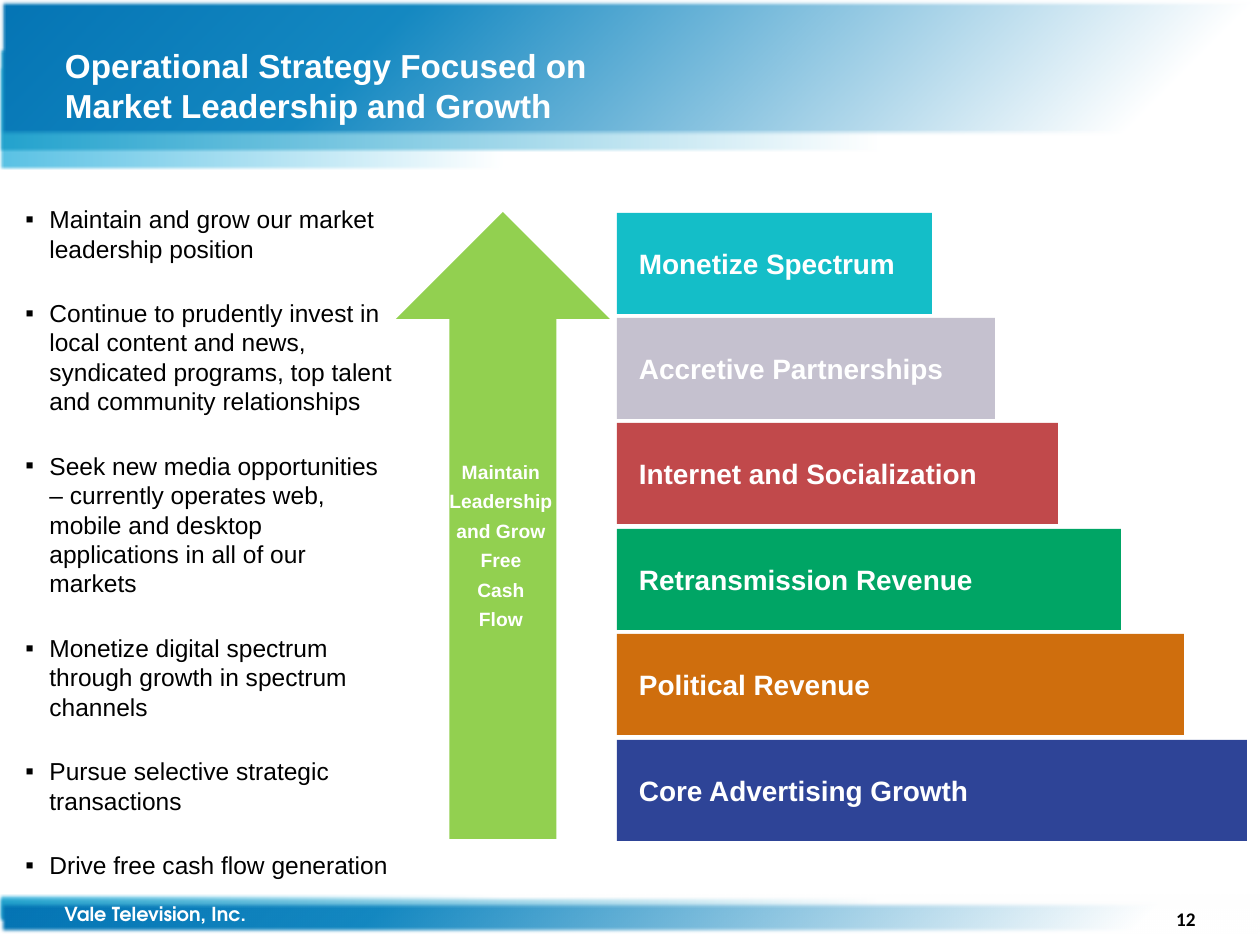
from dataclasses import dataclass
from typing import NamedTuple

from lxml.etree import SubElement
from pptx import Presentation
from pptx.dml.color import RGBColor
from pptx.enum.shapes import MSO_SHAPE as Preset
from pptx.enum.text import MSO_ANCHOR as Anchor, PP_ALIGN as Align
from pptx.oxml.ns import qn
from pptx.util import Emu, Pt

EMU_PER_PX = 914400 / 126


@dataclass(frozen=True)
class Theme:
    font: str = "Arial"
    number_font: str = "Calibri"
    company_font: str = "TeX Gyre Adventor"
    white: str = "FFFFFF"
    black: str = "000000"
    arrow: str = "92D050"
    title_size: int = 19
    bar_size: int = 16
    bullet_size: int = 14
    small_size: int = 11
    radial_edge: float = 2.5
    linear_edge: float = 1


class Box(NamedTuple):
    left: int
    top: int
    width: int
    height: int


class Band(NamedTuple):
    box: Box
    stops: tuple
    radial: bool = False
    flipped: bool = False


class Bar(NamedTuple):
    label: str
    color: str


THEME = Theme()
PALE = ((0, "59C1E4"), (40, "FFFFFF"))
MIDDLE = ((0, "22A2CD"), (70, "FFFFFF"))
DEEP = ((0, "0474B4"), (30, "1488C1"), (90, "FFFFFF"))

BANDS = [
    Band(Box(0, 67, 1260, 103), PALE),
    Band(Box(0, 49, 1260, 103), MIDDLE),
    Band(Box(0, 0, 1260, 136), DEEP, radial=True),
    Band(Box(0, 895, 1260, 24), PALE, flipped=True),
    Band(Box(0, 898, 1260, 24), MIDDLE, flipped=True),
    Band(Box(0, 902, 1260, 32), DEEP, radial=True, flipped=True),
]
BULLETS = [
    "Maintain and grow our market leadership position",
    "Continue to prudently invest in local content and news, syndicated "
    "programs, top talent and community relationships",
    "Seek new media opportunities – currently operates web, mobile and "
    "desktop applications in all of our markets",
    "Monetize digital spectrum through growth in spectrum channels",
    "Pursue selective strategic transactions",
    "Drive free cash flow generation",
]
BARS = [
    Bar("Monetize Spectrum", "14BEC8"),
    Bar("Accretive Partnerships", "C5C1CF"),
    Bar("Internet and Socialization", "C1494B"),
    Bar("Retransmission Revenue", "00A565"),
    Bar("Political Revenue", "CF6E0D"),
    Bar("Core Advertising Growth", "2E4497"),
]
ARROW_LINES = ["Maintain", "Leadership", "and Grow", "Free", "Cash", "Flow"]


def px(value: int) -> Emu:
    return Emu(round(value * EMU_PER_PX))


def place(box: Box) -> list:
    return [px(length) for length in box]


def set_insets(frame, left: int, top: int, right: int, bottom: int) -> None:
    frame.margin_left, frame.margin_top = px(left), px(top)
    frame.margin_right, frame.margin_bottom = px(right), px(bottom)


def style(paragraph, size: int, color: str = THEME.white, bold: bool = True,
          font: str = THEME.font, align=Align.LEFT) -> None:
    paragraph.alignment = align
    paragraph.font.size = Pt(size)
    paragraph.font.bold = bold
    paragraph.font.name = font
    paragraph.font.color.rgb = RGBColor.from_string(color)


def add_preset(slide, preset, box: Box, color: str):
    shape = slide.shapes.add_shape(preset, *place(box))
    shape.shadow.inherit = False
    shape.fill.solid()
    shape.fill.fore_color.rgb = RGBColor.from_string(color)
    shape.line.fill.background()
    return shape


def add_band(slide, band: Band) -> None:
    shape = add_preset(slide, Preset.RECTANGLE, band.box, THEME.white)
    shape.fill.gradient()
    properties = shape._element.spPr
    if band.flipped:
        properties.find(qn("a:xfrm")).set("flipV", "1")
    gradient = properties.find(qn("a:gradFill"))
    for child in list(gradient):
        gradient.remove(child)
    stop_list = SubElement(gradient, qn("a:gsLst"))
    for position, color in band.stops:
        stop = SubElement(stop_list, qn("a:gs"), pos=str(position * 1000))
        SubElement(stop, qn("a:srgbClr"), val=color)
    if band.radial:
        focus = SubElement(gradient, qn("a:path"), {"path": "circle"})
        SubElement(focus, qn("a:fillToRect"), r="100000", b="100000")
    else:
        SubElement(gradient, qn("a:lin"), ang="0", scaled="1")
    edge = THEME.radial_edge if band.radial else THEME.linear_edge
    effects = properties.find(qn("a:effectLst"))
    SubElement(effects, qn("a:softEdge"), rad=str(Pt(edge)))


def add_text(slide, box: Box, lines: list):
    frame = slide.shapes.add_textbox(*place(box)).text_frame
    frame.word_wrap = True
    frame.text = "\n".join(lines)
    return frame


def add_bullets(slide, box: Box, lines: list) -> None:
    for index, paragraph in enumerate(add_text(slide, box, lines).paragraphs):
        properties = paragraph._p.get_or_add_pPr()
        properties.set("marL", str(px(24)))
        properties.set("indent", str(px(-24)))
        SubElement(properties, qn("a:buFont"), typeface=THEME.font)
        SubElement(properties, qn("a:buChar"), char="▪")
        if index:
            paragraph.space_before = Pt(10)
        paragraph.space_after = Pt(10)
        style(paragraph, THEME.bullet_size, THEME.black, bold=False)


def add_bar(slide, bar: Bar, box: Box) -> None:
    frame = add_preset(slide, Preset.RECTANGLE, box, bar.color).text_frame
    frame.vertical_anchor = Anchor.MIDDLE
    set_insets(frame, 22, 6, 6, 6)
    frame.text = bar.label
    style(frame.paragraphs[0], THEME.bar_size)


def set_title(slide, box: Box, text: str) -> None:
    title = slide.shapes.title
    title.left, title.top, title.width, title.height = place(box)
    frame = title.text_frame
    frame.text = text
    frame.vertical_anchor = Anchor.MIDDLE
    set_insets(frame, 0, 5, 11, 5)
    style(frame.paragraphs[0], THEME.title_size)
    # Bring the title in front of the header bands
    title._element.getparent().append(title._element)


def main() -> None:
    presentation = Presentation()
    presentation.slide_width, presentation.slide_height = px(1260), px(945)
    slide = presentation.slides.add_slide(presentation.slide_layouts[5])

    # Header and footer
    for band in BANDS:
        add_band(slide, band)
    set_title(slide, Box(65, 39, 979, 92),
              "Operational Strategy Focused on\vMarket Leadership and Growth")
    number = add_text(slide, Box(1159, 901, 54, 36), ["12"])
    style(number.paragraphs[0], THEME.small_size, THEME.black,
          font=THEME.number_font, align=Align.CENTER)
    company = add_text(slide, Box(52, 896, 365, 36), ["Vale Television, Inc."])
    style(company.paragraphs[0], THEME.small_size, font=THEME.company_font)

    # Strategy points
    add_bullets(slide, Box(13, 198, 398, 664), BULLETS)

    # Staircase of revenue sources
    for step, bar in enumerate(BARS):
        top = 213 + step * 527 // 5
        add_bar(slide, bar, Box(617, top, 315 + 63 * step, 101))

    # Growth arrow and its label
    add_preset(slide, Preset.UP_ARROW, Box(396, 212, 214, 627), THEME.arrow)
    label = add_text(slide, Box(431, 454, 140, 184), ARROW_LINES)
    for index, paragraph in enumerate(label.paragraphs):
        if index:
            paragraph.space_before = Pt(3.6)
        style(paragraph, THEME.small_size, align=Align.CENTER)

    presentation.save("out.pptx")


if __name__ == "__main__":
    main()
